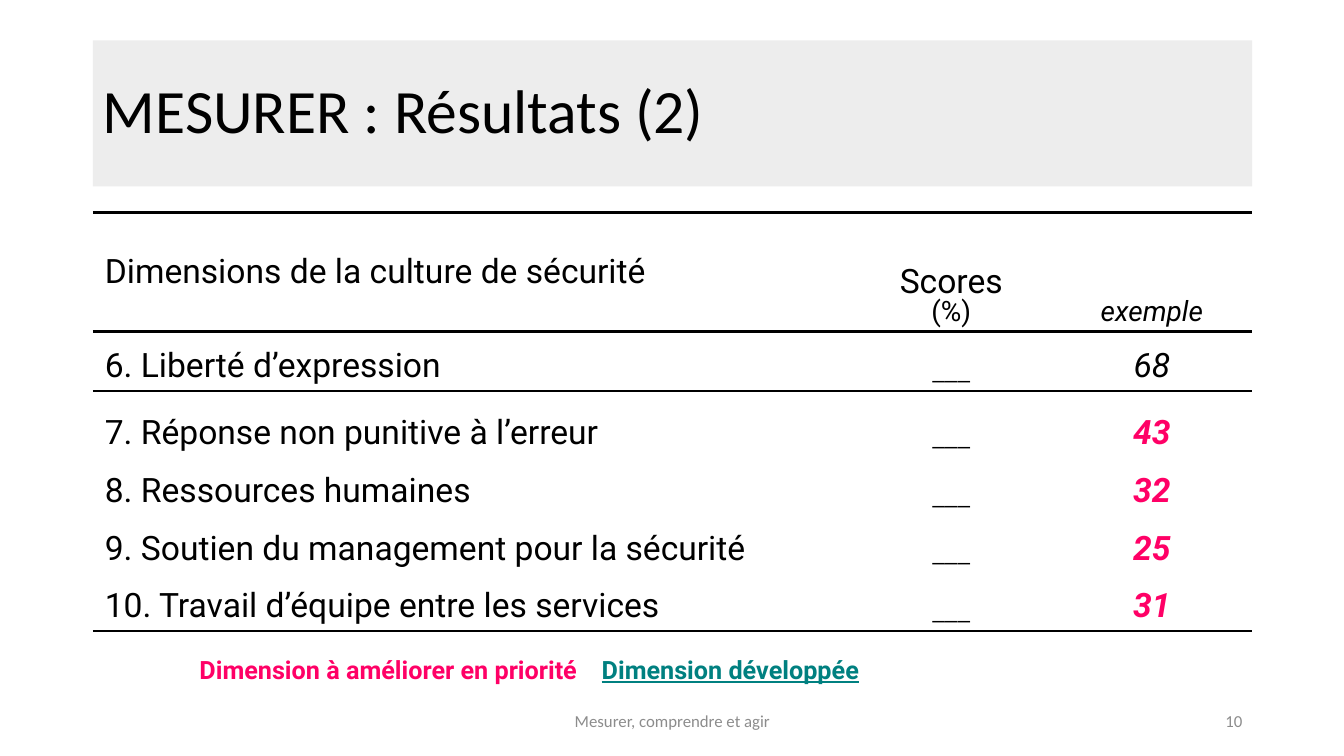
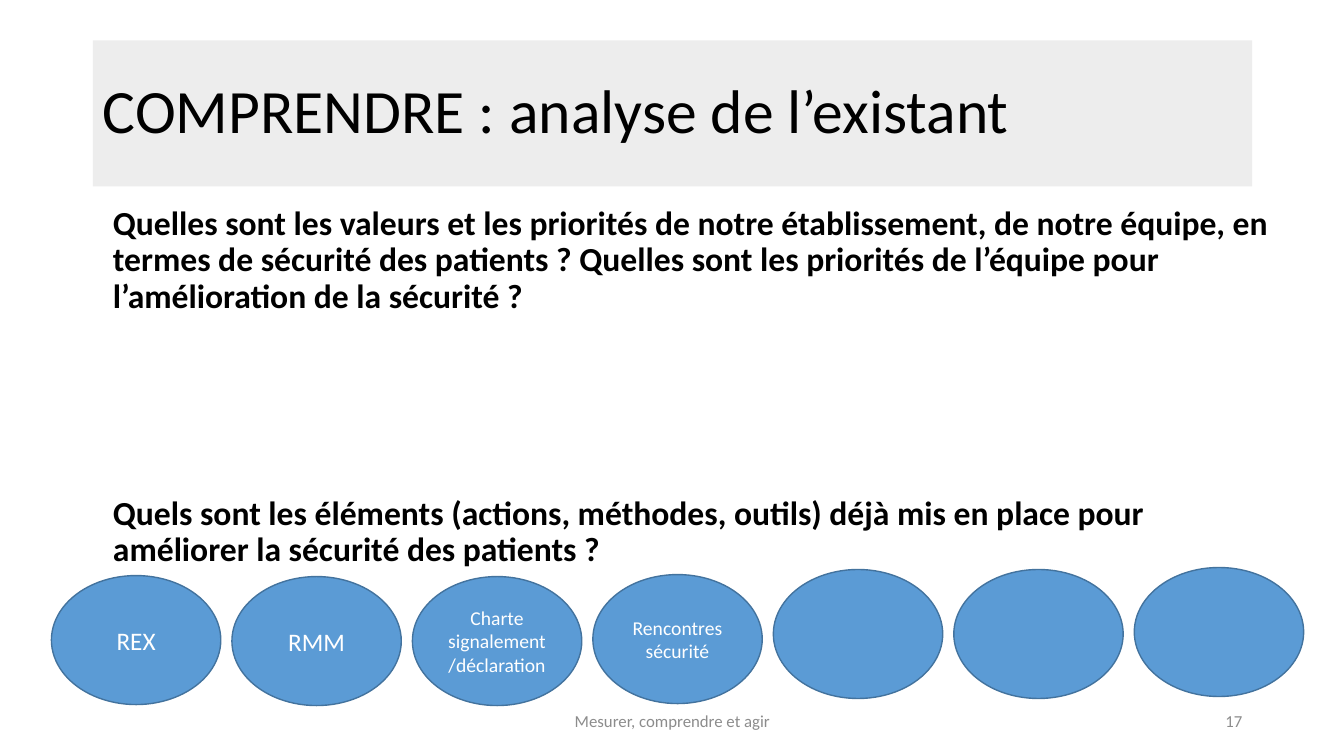
"""Build two slides on patient safety culture: scores and current practice."""
from lxml import etree
from pptx import Presentation
from pptx.dml.color import RGBColor
from pptx.enum import shapes, text
from pptx.oxml import ns
from pptx.util import Inches, Pt

INK = {"black": "000000", "band": "EDEDED", "pink": "FF0066", "teal": "008080",
       "grey": "8C8C8C", "white": "FFFFFF", "blue": "5B9BD5", "edge": "43739E"}
LEFT, CENTER, RIGHT = text.PP_ALIGN.LEFT, text.PP_ALIGN.CENTER, text.PP_ALIGN.RIGHT
MIDDLE, BOTTOM = text.MSO_ANCHOR.MIDDLE, text.MSO_ANCHOR.BOTTOM
PLAIN = "{2D5ABB26-0587-4C30-8999-92F81FD0307C}"
FOOT = "Mesurer, comprendre et agir"
HEADS = ["Dimensions de la culture de sécurité", "Scores", "exemple"]
SCORES = [("6. Liberté d’expression", 68), ("7. Réponse non punitive à l’erreur", 43),
          ("8. Ressources humaines", 32), ("9. Soutien du management pour la sécurité", 25),
          ("10. Travail d’équipe entre les services", 31)]
ASKS = [("Quelles sont les valeurs et les priorités de notre établissement, de notre "
         "équipe, en termes de sécurité des patients ? Quelles sont les priorités de "
         "l’équipe pour l’amélioration de la sécurité ?", 5),
        ("Quels sont les éléments (actions, méthodes, outils) déjà mis en place pour "
         "améliorer la sécurité des patients ?", 129)]
TOOLS = [("REX", 18, 5.71), ("RMM", 18, 5.72), ("Charte signalement/déclaration", 14, 5.72),
         ("Rencontres sécurité", 14, 5.7), ("", 18, 5.65), ("", 18, 5.65), ("", 18, 5.63)]


def color(name):
    return RGBColor.from_string(INK[name])


def paint(shape, fill):
    shape.fill.solid()
    shape.fill.fore_color.rgb = color(fill)


def place(shape, *box):
    shape.left, shape.top, shape.width, shape.height = map(Inches, box)


def write(frame, words, size=24, font="Roboto", ink="black", bold=False, italic=False,
          under=False, align=LEFT, space=None, before=None):
    para = frame.paragraphs[0]
    if para.runs:
        para = frame.add_paragraph()
    para.alignment, para.line_spacing = align, space
    if before is not None:
        para.space_before = Pt(before)
    run = para.add_run()
    run.text = words
    face = run.font
    face.name, face.size, face.color.rgb = font, Pt(size), color(ink)
    face.bold, face.italic, face.underline = bold, italic, under
    return para


def label(slide, words, box, wrap=True, anchor=MIDDLE, **style):
    frame = slide.shapes.add_textbox(*map(Inches, box)).text_frame
    frame.word_wrap, frame.vertical_anchor = wrap, anchor
    write(frame, words, **style)


def start(deck, layout, title, number):
    slide = deck.slides.add_slide(deck.slide_layouts[layout])
    head = slide.shapes.title
    place(head, 0.92, 0.4, 11.5, 1.45)
    paint(head, "band")
    frame = head.text_frame
    frame.vertical_anchor, frame.auto_size = MIDDLE, text.MSO_AUTO_SIZE.NONE
    write(frame, title, size=44, font="Calibri", space=0.9)
    small = dict(size=12, font="Calibri", ink="grey")
    label(slide, number, (9.42, 6.95, 3, 0.4), align=RIGHT, **small)
    label(slide, FOOT, (4.42, 6.95, 4.5, 0.4), align=CENTER, **small)
    return slide


def rule(cell, *sides):
    props = cell._tc.get_or_add_tcPr()
    for side in sides:
        line = etree.SubElement(props, ns.qn("a:ln" + side), w=str(Pt(2.25)))
        fill = etree.SubElement(line, ns.qn("a:solidFill"))
        etree.SubElement(fill, ns.qn("a:srgbClr"), val=INK["black"])


def grid(slide):
    tall = [1.18, 0.59, 0.65, 0.58, 0.57, 0.57]
    wide = [7.52, 1.99, 1.99]
    box = map(Inches, (0.92, 2.11, sum(wide), sum(tall)))
    table = slide.shapes.add_table(len(tall), len(wide), *box).table
    table._tbl.tblPr[0].text = PLAIN
    table.first_row = table.horz_banding = False
    for col, size in zip(table.columns, wide):
        col.width = Inches(size)
    for row, size in zip(table.rows, tall):
        row.height = Inches(size)
    edges = {0: "TB", 1: "T", len(SCORES): "B"}
    for r, row in enumerate(table.rows):
        for cell in row.cells:
            rule(cell, *edges.get(r, ""))
            cell.fill.background()
            cell.vertical_anchor = BOTTOM
            cell.margin_left = cell.margin_right = Inches(0.12)
    return table


def fill(table):
    name, score, sample = (table.cell(0, c) for c in range(3))
    name.vertical_anchor = MIDDLE
    write(name.text_frame, HEADS[0])
    write(score.text_frame, HEADS[1], align=CENTER, space=0.8)
    write(score.text_frame, "(%)", size=20, align=CENTER, space=0.8)
    write(sample.text_frame, HEADS[2], size=20, italic=True, align=CENTER, space=0.8)
    for r, (topic, value) in enumerate(SCORES, 1):
        name, score, sample = (table.cell(r, c).text_frame for c in range(3))
        low = value < 50
        write(name, topic, space=1.4 if r == 2 else None)
        write(score, "___", size=18, font="Calibri", align=CENTER)
        write(sample, str(value), ink="pink" if low else "black", bold=low,
              italic=True, align=CENTER)


def ask(slide):
    body = slide.placeholders[1]
    place(body, 0.92, 2, 11.8, 4.76)
    body.text_frame.auto_size = text.MSO_AUTO_SIZE.NONE
    for words, gap in ASKS:
        para = write(body.text_frame, words, font="Calibri", bold=True, space=0.9, before=gap)
        props = para._p.get_or_add_pPr()
        props.set("marL", str(Inches(0.1)))
        props.set("indent", "0")
        etree.SubElement(props, ns.qn("a:buNone"))


def oval(slide, words, size, left, top):
    shape = slide.shapes.add_shape(shapes.MSO_SHAPE.OVAL,
                                   *map(Inches, (left, top, 1.68, 1.28)))
    shape.shadow.inherit = False
    paint(shape, "blue")
    shape.line.color.rgb, shape.line.width = color("edge"), Pt(1)
    if words:
        shape.text_frame.vertical_anchor = MIDDLE
        write(shape.text_frame, words, size=size, font="Calibri", ink="white", align=CENTER)


def main():
    deck = Presentation()
    deck.slide_width, deck.slide_height = Inches(13.33), Inches(7.5)
    slide = start(deck, 5, "MESURER : Résultats (2)", "10")
    fill(grid(slide))
    key = dict(size=18, bold=True, wrap=False)
    label(slide, "Dimension à améliorer en priorité", (1.88, 6.44, 3.95, 0.4), ink="pink", **key)
    label(slide, "Dimension développée", (5.87, 6.44, 2.76, 0.4), ink="teal", under=True, **key)
    slide = start(deck, 1, "COMPRENDRE : analyse de l’existant", "17")
    ask(slide)
    for i, (words, size, top) in enumerate(TOOLS):
        oval(slide, words, size, 0.51 + 1.79 * i, top)
    deck.save("out.pptx")


if __name__ == "__main__":
    main()
